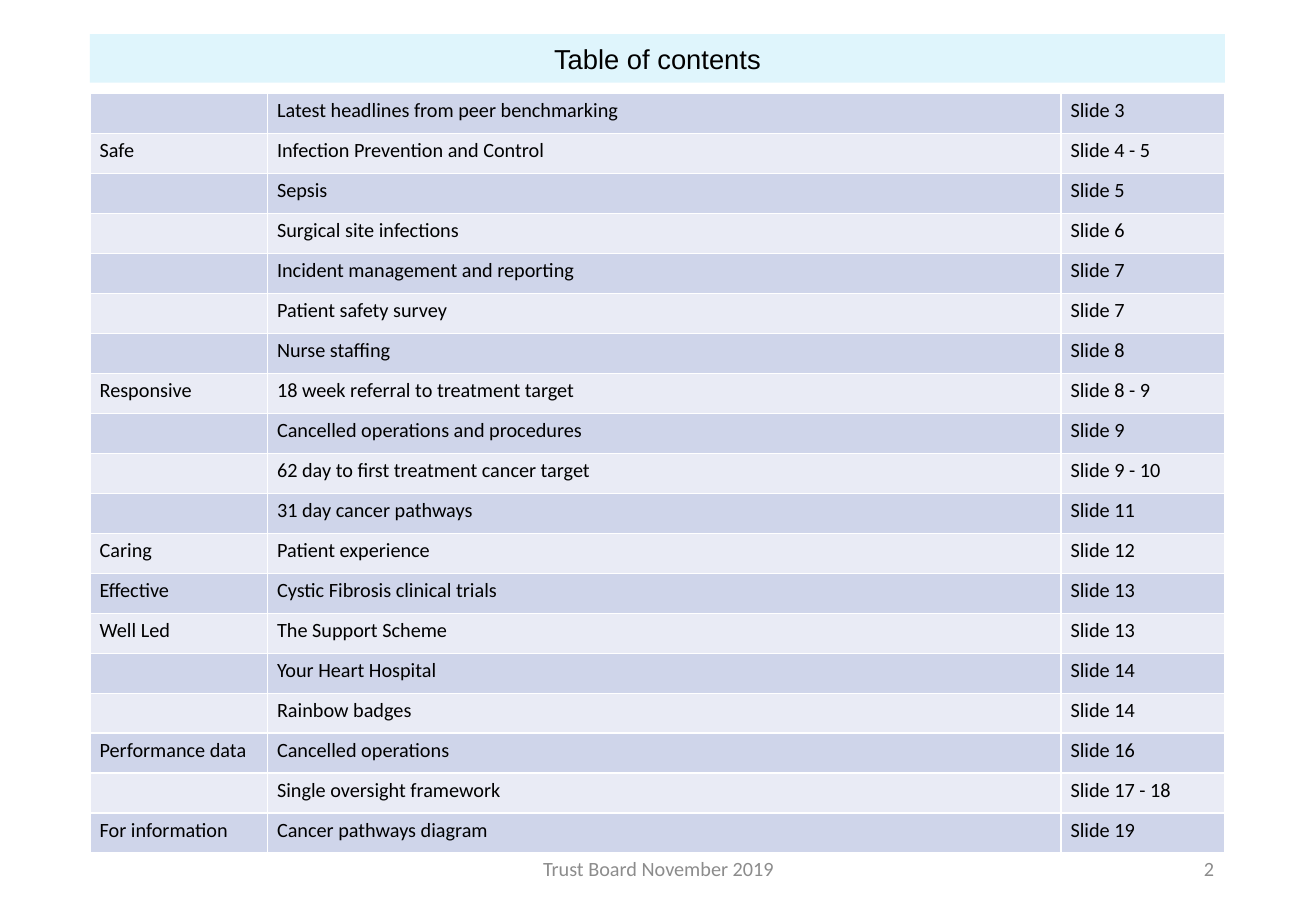
from pptx import Presentation, util as u
from pptx.dml.color import RGBColor
from pptx.enum import text
from pptx.oxml.ns import qn
from lxml import etree

COLORS = {
    "banner": "DFF5FC", "odd": "CFD5EA", "even": "E9EBF5",
    "border": "FFFFFF", "ink": "000000", "footer": "8C8C8C",
}
CONTENTS = [
    ("", "Latest headlines from peer benchmarking", "Slide 3"),
    ("Safe", "Infection Prevention and Control", "Slide 4 - 5"),
    ("", "Sepsis", "Slide 5"),
    ("", "Surgical site infections", "Slide 6"),
    ("", "Incident management and reporting", "Slide 7"),
    ("", "Patient safety survey", "Slide 7"),
    ("", "Nurse staffing", "Slide 8"),
    ("Responsive", "18 week referral to treatment target", "Slide 8 - 9"),
    ("", "Cancelled operations and procedures", "Slide 9"),
    ("", "62 day to first treatment cancer target", "Slide 9 - 10"),
    ("", "31 day cancer pathways", "Slide 11"),
    ("Caring", "Patient experience", "Slide 12"),
    ("Effective", "Cystic Fibrosis clinical trials", "Slide 13"),
    ("Well Led", "The Support Scheme", "Slide 13"),
    ("", "Your Heart Hospital", "Slide 14"),
    ("", "Rainbow badges", "Slide 14"),
    ("Performance data", "Cancelled operations", "Slide 16"),
    ("", "Single oversight framework", "Slide 17 - 18"),
    ("For information", "Cancer pathways diagram", "Slide 19"),
]
COLUMN_WIDTHS = [1.46, 6.53, 1.35]
LEFT, WIDTH = 0.74, sum(COLUMN_WIDTHS)
TABLE_TOP, TABLE_HEIGHT = 0.77, 6.26


def add_span(para, words, size, font, color):
    span = para.add_run()
    span.text = words
    span.font.size = u.Pt(size)
    span.font.name = font
    span.font.color.rgb = RGBColor.from_string(COLORS[color])


def add_borders(cell):
    """Draw all four cell edges; call before the fill is set."""
    properties = cell._tc.get_or_add_tcPr()
    for edge in ("a:lnL", "a:lnR", "a:lnT", "a:lnB"):
        line = etree.SubElement(properties, qn(edge), w=str(u.Pt(1)))
        fill = etree.SubElement(line, qn("a:solidFill"))
        etree.SubElement(fill, qn("a:srgbClr"), val=COLORS["border"])


deck = Presentation()
deck.slide_width, deck.slide_height = u.Inches(10.83), u.Inches(7.5)
page = deck.slides.add_slide(deck.slide_layouts[5])

# Title banner
title = page.shapes.title
title.left, title.top = u.Inches(LEFT), u.Inches(0.28)
title.width, title.height = u.Inches(WIDTH), u.Inches(0.4)
title.fill.solid()
title.fill.fore_color.rgb = RGBColor.from_string(COLORS["banner"])
title.text_frame.auto_size = text.MSO_AUTO_SIZE.NONE
title.text_frame.vertical_anchor = text.MSO_ANCHOR.MIDDLE
para = title.text_frame.paragraphs[0]
para.alignment = text.PP_ALIGN.CENTER
add_span(para, "Table of contents", 16.2, "Arial", "ink")

# Contents table
table = page.shapes.add_table(
    len(CONTENTS), len(COLUMN_WIDTHS), u.Inches(LEFT), u.Inches(TABLE_TOP),
    u.Inches(WIDTH), u.Inches(TABLE_HEIGHT)).table
table.first_row = False
for column, width in zip(table.columns, COLUMN_WIDTHS):
    column.width = u.Inches(width)
for index, entry in enumerate(CONTENTS):
    table.rows[index].height = u.Inches(TABLE_HEIGHT / len(CONTENTS))
    for column, words in enumerate(entry):
        cell = table.cell(index, column)
        cell.margin_left = cell.margin_right = u.Inches(0.08)
        cell.margin_top = cell.margin_bottom = u.Inches(0.04)
        add_borders(cell)
        cell.fill.solid()
        band = "even" if index % 2 else "odd"
        cell.fill.fore_color.rgb = RGBColor.from_string(COLORS[band])
        para = cell.text_frame.paragraphs[0]
        if words:
            add_span(para, words, 12, "Calibri", "ink")
        else:  # keeps an empty cell from stretching its row
            etree.SubElement(para._p, qn("a:endParaRPr"), sz="1200")

# Footer and page number
for words, left, width, alignment in [
    ("Trust Board November 2019", 3.59, 3.66, text.PP_ALIGN.CENTER),
    ("2", 7.65, 2.44, text.PP_ALIGN.RIGHT),
]:
    box = page.shapes.add_textbox(
        u.Inches(left), u.Inches(6.95), u.Inches(width), u.Inches(0.4))
    box.text_frame.word_wrap = True
    box.text_frame.vertical_anchor = text.MSO_ANCHOR.MIDDLE
    para = box.text_frame.paragraphs[0]
    para.alignment = alignment
    add_span(para, words, 12, "Calibri", "footer")

deck.save("out.pptx")
